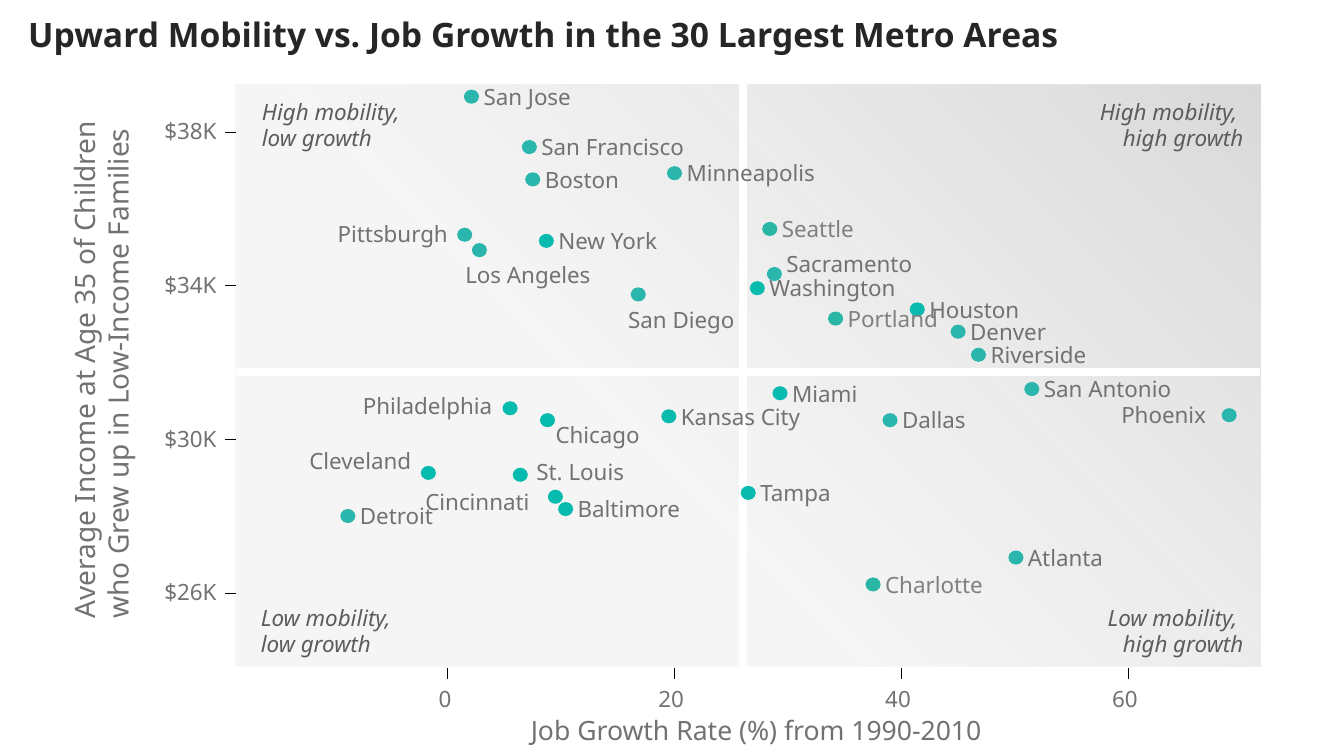
from dataclasses import dataclass

from lxml.etree import SubElement
from pptx import Presentation
from pptx.dml.color import RGBColor
from pptx.enum.shapes import MSO_CONNECTOR, MSO_SHAPE
from pptx.enum.text import PP_ALIGN
from pptx.oxml import parse_xml
from pptx.oxml.ns import nsdecls, qn
from pptx.util import Inches, Pt

TITLE = "Upward Mobility vs. Job Growth in the 30 Largest Metro Areas"
INCOME_TITLE = "Average Income at Age 35 of Children who Grew up in Low-Income Families"
GROWTH_TITLE = "Job Growth Rate (%) from 1990-2010"
INCOME_TICKS = (26, 30, 34, 38)
GROWTH_TICKS = (0, 20, 40, 60)

# Tone: city, job growth in %, income in $K, label width
CITIES = {
    "bright": [
        ("New York", 8.7, 35.17, 1.04), ("Miami", 29.3, 31.21, 0.66),
        ("Washington", 27.3, 33.94, 1.27), ("Houston", 41.4, 33.39, 0.92),
        ("Baltimore", 10.4, 28.2, 1.03), ("Tampa", 26.5, 28.62, 0.74),
        ("Kansas City", 19.5, 30.61, 1.26),
    ],
    "vivid": [
        ("Chicago", 8.8, 30.51, 0.88), ("Philadelphia", 5.5, 30.82, 1.32),
        ("Cleveland", -1.7, 29.14, 1.06), ("Cincinnati", 9.5, 28.52, 1.09),
        ("St. Louis", 6.4, 29.09, 0.92),
    ],
    "soft": [
        ("Los Angeles", 2.8, 34.93, 1.3), ("Dallas", 39, 30.51, 0.66),
        ("Detroit", -8.8, 28.02, 0.76), ("Boston", 7.5, 36.77, 0.74),
        ("Atlanta", 50.1, 26.94, 0.77), ("San Francisco", 7.2, 37.61, 1.48),
        ("Riverside", 46.8, 32.21, 0.98), ("Minneapolis", 20, 36.93, 1.31),
        ("San Diego", 16.8, 33.78, 1.09), ("Pittsburgh", 1.5, 35.33, 1.12),
        ("Denver", 45, 32.81, 0.76), ("Sacramento", 28.8, 34.31, 1.27),
        ("San Jose", 2.1, 38.92, 0.9), ("San Antonio", 51.5, 31.32, 1.31),
        ("Phoenix", 68.9, 30.64, 0.87),
    ],
    "pale": [
        ("Seattle", 28.4, 35.48, 0.73), ("Portland", 34.2, 33.15, 0.91),
        ("Charlotte", 37.5, 26.24, 1.01),
    ],
}
# Labels off the usual spot: near edge and middle, measured from the dot
LEFT_LABELS = {
    "Philadelphia": (0.14, -0.02), "Pittsburgh": (0.14, -0.01), "Cleveland": (0.12, -0.12),
    "Cincinnati": (0.2, 0.05), "Phoenix": (0.2, 0),
}
RIGHT_LABELS = {
    "Los Angeles": (-0.14, 0.24), "Chicago": (0.08, 0.14), "San Diego": (-0.1, 0.25),
    "Sacramento": (0.12, -0.1), "St. Louis": (0.16, -0.03),
}
USUAL_LABEL = (0.12, 0)

# Lines, left, top, width, alignment
QUADRANTS = [
    (("High mobility,", "low growth"), 2.5, 0.92, 3.2, PP_ALIGN.LEFT),
    (("High mobility, ", "high growth"), 9.42, 0.92, 3.01, PP_ALIGN.RIGHT),
    (("Low mobility,", "low growth"), 2.49, 5.94, 2.96, PP_ALIGN.LEFT),
    (("Low mobility, ", "high growth"), 9.47, 5.94, 2.96, PP_ALIGN.RIGHT),
]


@dataclass(frozen=True)
class Theme:
    font = "Noto Sans"
    title, label, quadrant, divider, tick = "262626", "727272", "5C5C5C", "FFFFFF", "000000"
    dots = {"bright": "08BBAE", "vivid": "05BBAE", "soft": "2AB6AC", "pale": "29B6A4"}
    pale_label = "808080"
    title_size, income_size, growth_size, label_size = 24, 20, 19, 16


PLOT_LEFT, PLOT_TOP, PLOT_WIDTH, PLOT_HEIGHT = 2.34, 0.84, 10.16, 5.77
PLOT_RIGHT = PLOT_LEFT + PLOT_WIDTH
AXIS_BOTTOM = 6.63
TICK_LENGTH = 0.11
DOT_WIDTH, DOT_HEIGHT = 0.15, 0.14
LABEL_HEIGHT = 0.27

presentation = Presentation()
presentation.slide_width, presentation.slide_height = Inches(13.33), Inches(7.5)
slide = presentation.slides.add_slide(presentation.slide_layouts[6])


def growth_x(growth):
    return 4.44 + growth * 2.25 / 20


def income_y(income):
    return 1.31 + (38 - income) * 4.58 / 12


def add_text(lines, left, top, width, height, *, size=Theme.label_size, color=Theme.label,
             align=PP_ALIGN.LEFT, bold=False, italic=False, wrap=False, margins=(0, 0), rotation=0):
    box = slide.shapes.add_textbox(Inches(left), Inches(top), Inches(width), Inches(height))
    box.rotation = rotation
    frame = box.text_frame
    frame.word_wrap = wrap
    frame.margin_left = frame.margin_right = Inches(margins[0])
    frame.margin_top = frame.margin_bottom = Inches(margins[1])
    frame.text = "\n".join(lines)
    for paragraph in frame.paragraphs:
        paragraph.alignment = align
        font = paragraph.runs[0].font
        font.name, font.size, font.bold, font.italic = Theme.font, Pt(size), bold, italic
        font.color.rgb = RGBColor.from_string(color)


def add_shape(preset, left, top, width, height, color):
    shape = slide.shapes.add_shape(preset, Inches(left), Inches(top), Inches(width), Inches(height))
    shape.shadow.inherit = False
    shape.fill.solid()
    shape.fill.fore_color.rgb = RGBColor.from_string(color)
    shape.line.fill.background()
    return shape


def add_line(start, end, color, weight):
    line = slide.shapes.add_connector(MSO_CONNECTOR.STRAIGHT, *map(Inches, start + end))
    line.line.color.rgb = RGBColor.from_string(color)
    line.line.width = Pt(weight)
    SubElement(line._element.spPr, qn("a:effectLst"))


def add_plot_area():
    """Panel shaded outwards from its lower left corner, cut into quadrants."""
    panel = add_shape(MSO_SHAPE.RECTANGLE, PLOT_LEFT, PLOT_TOP, PLOT_WIDTH, PLOT_HEIGHT, "F2F2F2")
    properties = panel._element.spPr
    gradient = parse_xml(
        f'<a:gradFill {nsdecls("a")} rotWithShape="1"><a:gsLst>'
        '<a:gs pos="37000"><a:srgbClr val="F2F2F2"><a:alpha val="65000"/></a:srgbClr></a:gs>'
        '<a:gs pos="100000"><a:srgbClr val="D9D9D9"/></a:gs></a:gsLst>'
        '<a:path path="circle"><a:fillToRect t="100000" r="100000"/></a:path></a:gradFill>')
    properties.replace(properties.find(qn("a:solidFill")), gradient)
    add_line((7.37, AXIS_BOTTOM), (7.37, 0.78), Theme.divider, 6)
    add_line((PLOT_LEFT, 3.69), (PLOT_RIGHT, 3.69), Theme.divider, 6)


def add_city(name, growth, income, width, tone):
    x, y = growth_x(growth), income_y(income)
    add_shape(MSO_SHAPE.OVAL, x - DOT_WIDTH / 2, y - DOT_HEIGHT / 2,
              DOT_WIDTH, DOT_HEIGHT, Theme.dots[tone])
    if name in LEFT_LABELS:
        gap, drop = LEFT_LABELS[name]
        left = x - gap - width
    else:
        gap, drop = RIGHT_LABELS.get(name, USUAL_LABEL)
        left = x + gap
    add_text([name], left, y + drop - LABEL_HEIGHT / 2, width, LABEL_HEIGHT,
             color=Theme.pale_label if tone == "pale" else Theme.label)


def add_axes():
    for income in INCOME_TICKS:
        y = income_y(income)
        add_line((PLOT_LEFT, y), (PLOT_LEFT - TICK_LENGTH, y), Theme.tick, 0.63)
        add_text([f"${income}K"], 1.63, y - 0.15, 0.57, LABEL_HEIGHT)
    for growth in GROWTH_TICKS:
        x, width = growth_x(growth), 0.14 * len(str(growth))
        add_line((x, AXIS_BOTTOM), (x, AXIS_BOTTOM + TICK_LENGTH), Theme.tick, 0.63)
        add_text([str(growth)], x - 0.02 - width / 2, 6.8, width, LABEL_HEIGHT)
    add_text([INCOME_TITLE], -1.68, 3.12, 5.36, 0.67,
             size=Theme.income_size, wrap=True, rotation=270)
    add_text([GROWTH_TITLE], 5.13, 7.08, 4.74, 0.32,
             size=Theme.growth_size, align=PP_ALIGN.CENTER)


def main():
    add_plot_area()
    for tone, cities in CITIES.items():
        for city in cities:
            add_city(*city, tone)
    add_axes()
    for lines, left, top, width, align in QUADRANTS:
        add_text(lines, left, top, width, 0.64, color=Theme.quadrant, align=align,
                 italic=True, wrap=True, margins=(0.1, 0.05))
    add_text([TITLE], 0.28, 0.14, 13.05, 0.4,
             size=Theme.title_size, color=Theme.title, bold=True, wrap=True)
    presentation.save("out.pptx")


if __name__ == "__main__":
    main()
